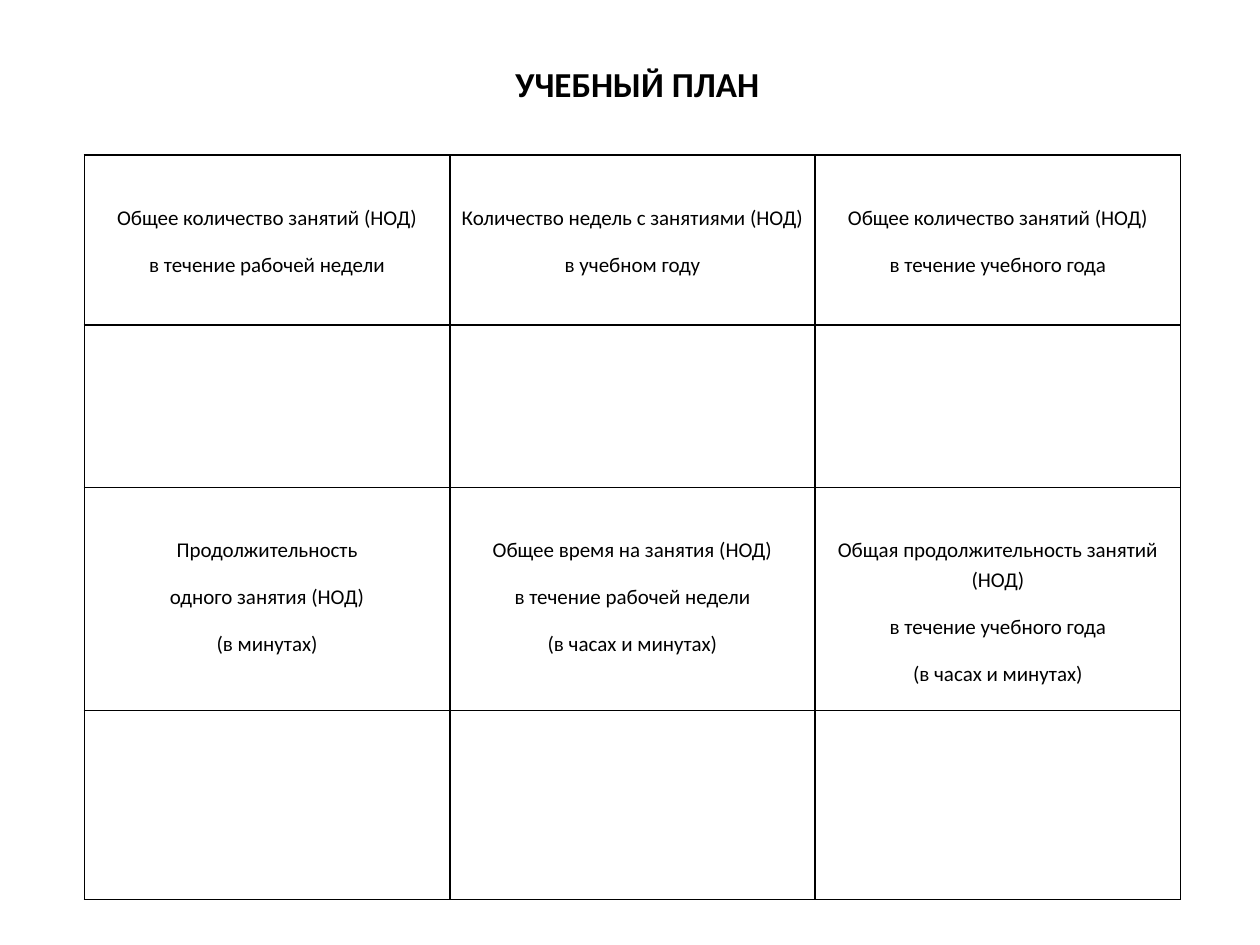
from lxml.etree import SubElement
from pptx import Presentation
from pptx.dml.color import RGBColor
from pptx.enum.text import MSO_ANCHOR, PP_ALIGN
from pptx.oxml.ns import qn
from pptx.util import Inches, Pt

BLACK = RGBColor(0, 0, 0)
FONT = "Calibri"
WIDE, HIGH = Inches(10), Inches(7.5)
COLS = 3
ROWS = (1.35, 1.29, 1.77, 1.5)
HEADS = {
    0: (
        "Общее количество занятий (НОД)\nв течение рабочей недели",
        "Количество недель с занятиями (НОД)\nв учебном году",
        "Общее количество занятий (НОД)\nв течение учебного года",
    ),
    2: (
        "Продолжительность\nодного занятия (НОД)\n(в минутах)",
        "Общее время на занятия (НОД)\nв течение рабочей недели\n(в часах и минутах)",
        "Общая продолжительность занятий (НОД)\nв течение учебного года\n(в часах и минутах)",
    ),
}


def share(left, top, width, height):
    """Turn shares of the slide's size into a box."""
    return (int(WIDE * left), int(HIGH * top),
            int(WIDE * width), int(HIGH * height))


def write(frame, text, size, bold=False):
    """Set centred text and format its runs."""
    frame.text = text
    for para in frame.paragraphs:
        para.alignment = PP_ALIGN.CENTER
        for run in para.runs:
            font = run.font
            font.name, font.size, font.bold = FONT, Pt(size), bold
            font.color.rgb = BLACK


def edge(cell):
    """Draw a thin black line on each side of a cell."""
    props = cell._tc.get_or_add_tcPr()
    for side in ("lnL", "lnR", "lnT", "lnB"):
        line = SubElement(props, qn(f"a:{side}"), w=str(Pt(1)))
        fill = SubElement(line, qn("a:solidFill"))
        SubElement(fill, qn("a:srgbClr"), val=str(BLACK))


def add_title(slide, box):
    """Place the heading in its box."""
    frame = slide.shapes.add_textbox(*box).text_frame
    frame.word_wrap = True
    frame.vertical_anchor = MSO_ANCHOR.MIDDLE
    write(frame, "УЧЕБНЫЙ ПЛАН", 20, True)


def add_plan(slide, box):
    """Fill the box with the plan table of heads and blank rows."""
    table = slide.shapes.add_table(len(ROWS), COLS, *box).table
    table.first_row = table.horz_banding = False
    for row, part in zip(table.rows, ROWS):
        row.height = int(box[3] * part / sum(ROWS))
    for cell in table.iter_cells():
        edge(cell)
        cell.fill.background()
    for row, heads in HEADS.items():
        for col, text in enumerate(heads):
            cell = table.cell(row, col)
            cell.margin_left = cell.margin_right = Inches(0.06)
            cell.margin_top, cell.margin_bottom = Inches(0.37), 0
            write(cell.text_frame, text, 12)
            for para in cell.text_frame.paragraphs:
                para.line_spacing, para.space_after = 1.15, Pt(10)


def main():
    """Build the slide and save it."""
    deck = Presentation()
    deck.slide_width, deck.slide_height = WIDE, HIGH
    slide = deck.slides.add_slide(deck.slide_layouts[6])
    add_plan(slide, share(0.067, 0.164, 0.87, 0.788))
    add_title(slide, share(0.128, 0.059, 0.756, 0.059))
    deck.save("out.pptx")


if __name__ == "__main__":
    main()
